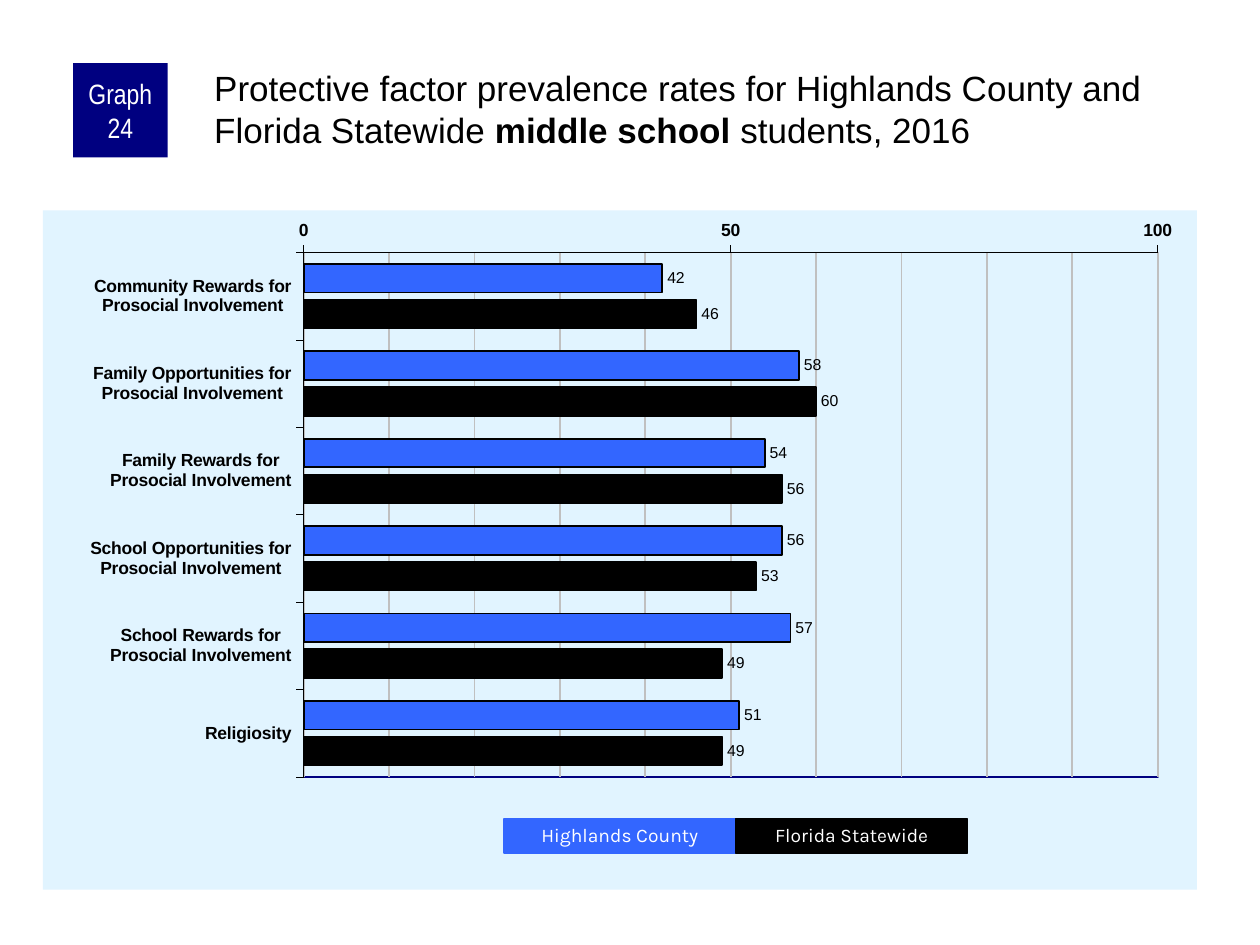
from dataclasses import dataclass

from lxml.etree import _Element
from pptx import Presentation
from pptx.chart.data import CategoryChartData
from pptx.dml.color import RGBColor
from pptx.enum.chart import XL_AXIS_CROSSES, XL_CHART_TYPE, XL_LABEL_POSITION, XL_TICK_MARK
from pptx.enum.shapes import MSO_SHAPE
from pptx.enum.text import MSO_ANCHOR, PP_ALIGN
from pptx.oxml import parse_xml
from pptx.oxml.ns import nsdecls, qn
from pptx.util import Inches, Pt

WIDE, HIGH = 10, 7.5


@dataclass(frozen=True)
class Theme:
    navy: str = "000080"
    blue: str = "3366FF"
    black: str = "000000"
    white: str = "FFFFFF"
    pale: str = "E1F4FF"
    grey: str = "C0C0C0"
    font: str = "Arial"
    slim: str = "Arial Narrow"
    round: str = "Karla"
    title: float = 20
    badge: float = 16
    key: float = 11
    axis: float = 10
    value: float = 9


@dataclass(frozen=True)
class Group:
    name: str
    color: str
    rates: tuple


@dataclass(frozen=True)
class Box:
    """Place and size as shares of the slide."""
    left: float
    top: float
    width: float
    height: float

    def place(self) -> tuple:
        return (Inches(self.left * WIDE), Inches(self.top * HIGH),
                Inches(self.width * WIDE), Inches(self.height * HIGH))


THEME = Theme()
FACTORS = (
    "Community Rewards for\nProsocial Involvement",
    "Family Opportunities for\nProsocial Involvement",
    "Family Rewards for\nProsocial Involvement",
    "School Opportunities for\nProsocial Involvement",
    "School Rewards for\nProsocial Involvement",
    "Religiosity",
)
GROUPS = (
    Group("Highlands County", THEME.blue, (42, 58, 54, 56, 57, 51)),
    Group("Florida Statewide", THEME.black, (46, 60, 56, 53, 49, 49)),
)
TITLE = (
    ("Protective factor prevalence rates for Highlands County and Florida Statewide ", False),
    ("middle school ", True),
    ("students, 2016", False),
)


def rgb(color: str) -> RGBColor:
    return RGBColor.from_string(color)


def style(font, name: str, size: float, color: str, bold: bool = False) -> None:
    font.name, font.size, font.bold = name, Pt(size), bold
    font.color.rgb = rgb(color)


def paint(fill, color: str) -> None:
    fill.solid()
    fill.fore_color.rgb = rgb(color)


def rule(line, color: str, width: float) -> None:
    paint(line.fill, color)
    line.width = Pt(width)


def add_block(slide, box: Box, color: str, text: str, font: str, size: float):
    block = slide.shapes.add_shape(MSO_SHAPE.RECTANGLE, *box.place())
    block.shadow.inherit = False
    paint(block.fill, color)
    block.line.fill.background()
    frame = block.text_frame
    frame.word_wrap = True
    frame.vertical_anchor = MSO_ANCHOR.MIDDLE
    par = frame.paragraphs[0]
    par.alignment = PP_ALIGN.CENTER
    run = par.add_run()
    run.text = text
    style(run.font, font, size, THEME.white)
    return block


def add_title(slide, box: Box) -> None:
    frame = slide.shapes.add_textbox(*box.place()).text_frame
    frame.word_wrap = True
    frame.margin_left = frame.margin_top = Inches(0.03)
    frame.margin_right = frame.margin_bottom = 0
    for text, bold in TITLE:
        run = frame.paragraphs[0].add_run()
        run.text = text
        style(run.font, THEME.font, THEME.title, THEME.black, bold)


def add_key(slide, box: Box) -> None:
    """Draw one cell per group, side by side."""
    for col, group in enumerate(GROUPS):
        cell = Box(box.left + col * box.width, box.top, box.width, box.height)
        block = add_block(slide, cell, group.color, group.name, THEME.round, THEME.key)
        rule(block.line, group.color, 0.75)
        block.text_frame.paragraphs[0].line_spacing = 0.9


def set_axis(axis) -> None:
    axis.major_tick_mark = XL_TICK_MARK.OUTSIDE
    axis.minor_tick_mark = XL_TICK_MARK.NONE
    rule(axis.format.line, THEME.black, 0.25)
    style(axis.tick_labels.font, THEME.font, THEME.axis, THEME.black, True)


def make_look(fill: str, line: str) -> _Element:
    return parse_xml(f'<c:spPr {nsdecls("c", "a")}>{fill}<a:ln w="12700">{line}</a:ln></c:spPr>')


def solid(color: str) -> str:
    return f'<a:solidFill><a:srgbClr val="{color}"/></a:solidFill>'


def set_area(chart, plot: Box) -> None:
    """Fix the inner plot area and colour the areas behind the bars."""
    root = chart.element.find(qn("c:chart"))
    area = root.find(qn("c:plotArea"))
    for old in area.findall(qn("c:layout")):
        area.remove(old)
    parts = (("x", plot.left), ("y", plot.top), ("w", plot.width), ("h", plot.height))
    modes = '<c:xMode val="edge"/><c:yMode val="edge"/>'
    sizes = "".join(f'<c:{tag} val="{share}"/>' for tag, share in parts)
    area.insert(0, parse_xml(
        f'<c:layout {nsdecls("c")}><c:manualLayout><c:layoutTarget val="inner"/>'
        f'{modes}{sizes}</c:manualLayout></c:layout>'))
    area.append(make_look("<a:noFill/>", solid(THEME.navy)))
    root.addnext(make_look(solid(THEME.pale), "<a:noFill/>"))


def add_bars(slide, box: Box, plot: Box) -> None:
    data = CategoryChartData()
    data.categories = FACTORS
    for group in GROUPS:
        data.add_series(group.name, group.rates)
    chart = slide.shapes.add_chart(XL_CHART_TYPE.BAR_CLUSTERED, *box.place(), data).chart
    chart.has_legend = chart.has_title = False
    style(chart.font, THEME.font, THEME.axis, THEME.black)

    cats, rates = chart.category_axis, chart.value_axis
    set_axis(cats)
    set_axis(rates)
    cats.reverse_order = True
    cats.crosses = XL_AXIS_CROSSES.MAXIMUM
    rates.minimum_scale, rates.maximum_scale = 0, 100
    rates.major_unit, rates.minor_unit = 50, 10
    rates.has_major_gridlines = rates.has_minor_gridlines = True
    rule(rates.major_gridlines.format.line, THEME.grey, 1)
    minor = chart.element.find(".//" + qn("c:minorGridlines"))
    minor.append(make_look("", solid(THEME.grey)))

    bars = chart.plots[0]
    bars.gap_width, bars.overlap, bars.vary_by_categories = 80, -25, False
    for series, group in zip(bars.series, GROUPS):
        paint(series.format.fill, group.color)
        rule(series.format.line, THEME.black, 1)
        tags = series.data_labels
        tags.show_value = True
        tags.position = XL_LABEL_POSITION.OUTSIDE_END
        style(tags.font, THEME.font, THEME.value, THEME.black)
    set_area(chart, plot)


def main() -> None:
    deck = Presentation()
    deck.slide_width, deck.slide_height = Inches(WIDE), Inches(HIGH)
    slide = deck.slides.add_slide(deck.slide_layouts[6])
    add_bars(slide, Box(0.034, 1.67 / HIGH, 0.916, 5.39 / HIGH), Box(0.226, 0.062, 0.74, 0.772))
    badge = add_block(slide, Box(0.058, 0.5 / HIGH, 0.075, 0.1), THEME.navy,
                      "Graph 24", THEME.slim, THEME.badge).text_frame
    badge.margin_left = badge.margin_right = Inches(0.05)
    badge.margin_top = badge.margin_bottom = 0
    add_title(slide, Box(0.167, 0.5 / HIGH, 0.792, 0.83 / HIGH))
    add_key(slide, Box(0.4, 6.5 / HIGH, 0.184, 0.27 / HIGH))
    deck.save("out.pptx")


if __name__ == "__main__":
    main()
